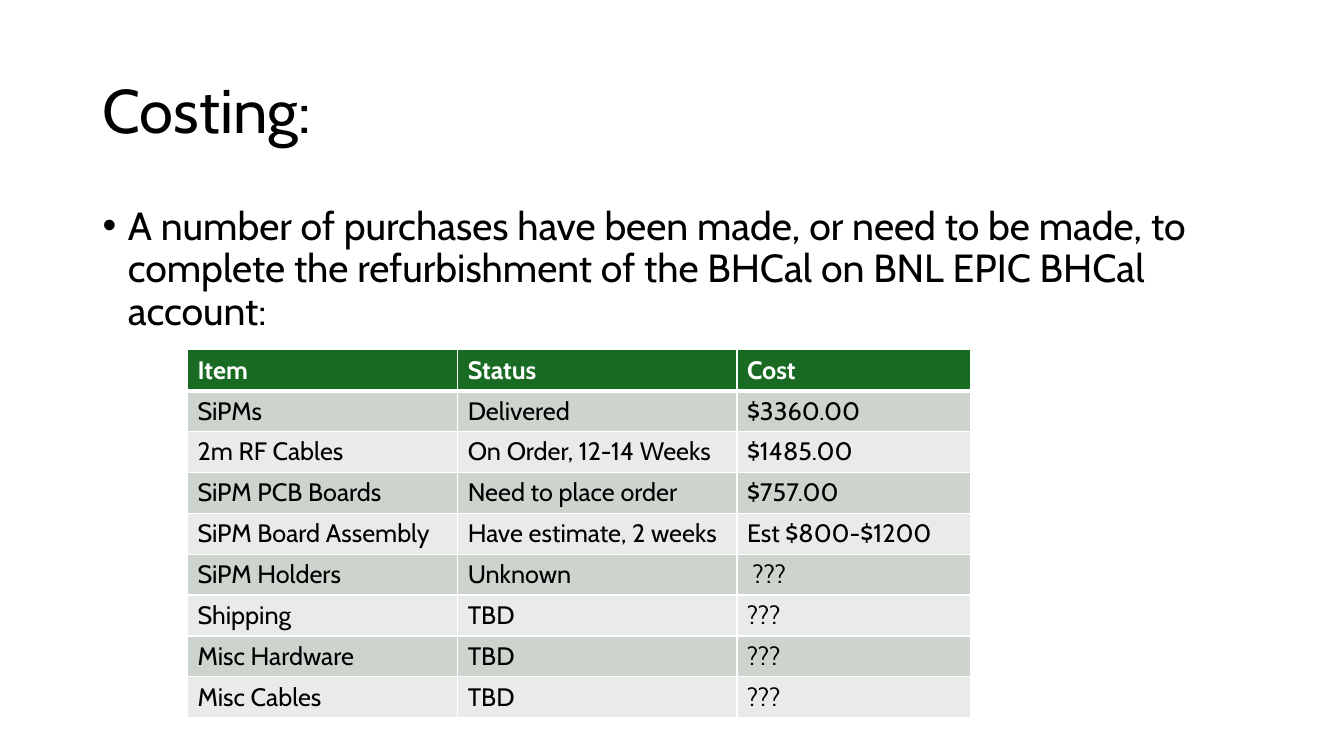
from dataclasses import dataclass

from lxml import etree
from pptx import Presentation
from pptx import util as u
from pptx.dml.color import RGBColor
from pptx.enum import text
from pptx.oxml import ns

SLIDE_W, SLIDE_H = 13.33, 7.5
MARGIN = 0.069 * SLIDE_W
CONTENT_W = SLIDE_W - 2 * MARGIN
FONT = "Cabin"
BLACK, WHITE, GREEN = "000000", "FFFFFF", "196B24"
BANDS = ("CCD4CD", "E8EBE8")
COLUMN_WIDTHS = (2.68, 2.77, 2.32)
ROW_H = 3.65 / 9
TABLE_LEFT, TABLE_TOP = 1.86, 3.47
THIN, THICK = 1, 3


@dataclass(frozen=True)
class Purchase:
    item: str
    status: str
    cost: str


HEADINGS = Purchase("Item", "Status", "Cost")
PURCHASES = (
    Purchase("SiPMs", "Delivered", "$3360.00"),
    Purchase("2m RF Cables", "On Order, 12-14 Weeks", "$1485.00"),
    Purchase("SiPM PCB Boards", "Need to place order", "$757.00"),
    Purchase("SiPM Board Assembly", "Have estimate, 2 weeks", "Est $800-$1200"),
    Purchase("SiPM Holders", "Unknown", " ???"),
    Purchase("Shipping", "TBD", "???"),
    Purchase("Misc Hardware", "TBD", "???"),
    Purchase("Misc Cables", "TBD", "???"),
)


def rgb(value: str) -> RGBColor:
    return RGBColor.from_string(value)


def write(frame, words: str, *, size: float, color: str = BLACK, bold: bool = False,
          line_spacing: float = 1.0, space_before: float = 0):
    """Put one formatted paragraph in a text frame and return it."""
    paragraph = frame.paragraphs[0]
    paragraph.alignment = text.PP_ALIGN.LEFT
    paragraph.line_spacing = line_spacing
    paragraph.space_before = u.Pt(space_before)
    run = paragraph.add_run()
    run.text = words
    run.font.name = FONT
    run.font.size = u.Pt(size)
    run.font.bold = bold
    run.font.color.rgb = rgb(color)
    return paragraph


def place(shape, left: float, top: float, width: float, height: float) -> None:
    shape.left, shape.top = u.Inches(left), u.Inches(top)
    shape.width, shape.height = u.Inches(width), u.Inches(height)


def add_bullet(paragraph, indent: float) -> None:
    properties = paragraph._p.get_or_add_pPr()
    properties.set("marL", str(u.Inches(indent)))
    properties.set("indent", str(-u.Inches(indent)))
    etree.SubElement(properties, ns.qn("a:buFont"), typeface="Arial")
    etree.SubElement(properties, ns.qn("a:buChar"), char="•")


def add_borders(cell, top: float, bottom: float) -> None:
    properties = cell._tc.get_or_add_tcPr()
    for side, width in (("L", THIN), ("R", THIN), ("T", top), ("B", bottom)):
        line = etree.SubElement(properties, ns.qn(f"a:ln{side}"), w=str(u.Pt(width)))
        fill = etree.SubElement(line, ns.qn("a:solidFill"))
        etree.SubElement(fill, ns.qn("a:srgbClr"), val=WHITE)


def add_cost_table(slide) -> None:
    rows = (HEADINGS, *PURCHASES)
    table = slide.shapes.add_table(
        len(rows), len(COLUMN_WIDTHS), u.Inches(TABLE_LEFT), u.Inches(TABLE_TOP),
        u.Inches(sum(COLUMN_WIDTHS)), u.Inches(ROW_H * len(rows))).table
    for column, width in zip(table.columns, COLUMN_WIDTHS):
        column.width = u.Inches(width)
    for r, purchase in enumerate(rows):
        heading = r == 0
        table.rows[r].height = u.Inches(ROW_H)
        for c, words in enumerate((purchase.item, purchase.status, purchase.cost)):
            cell = table.cell(r, c)
            add_borders(cell, THICK if r == 1 else THIN, THICK if heading else THIN)
            cell.fill.solid()
            cell.fill.fore_color.rgb = rgb(GREEN if heading else BANDS[(r - 1) % 2])
            write(cell.text_frame, words, size=18, bold=heading,
                  color=WHITE if heading else BLACK)


def main() -> None:
    deck = Presentation()
    deck.slide_width, deck.slide_height = u.Inches(SLIDE_W), u.Inches(SLIDE_H)
    slide = deck.slides.add_slide(deck.slide_layouts[5])

    # Title
    title = slide.shapes.title
    place(title, MARGIN, 0.4, CONTENT_W, 1.45)
    title.text_frame.vertical_anchor = text.MSO_ANCHOR.MIDDLE
    write(title.text_frame, "Costing:", size=44, line_spacing=0.9)

    # Introduction
    introduction = slide.shapes.add_textbox(0, 0, 0, 0)
    place(introduction, MARGIN, 2, CONTENT_W, 4.76)
    introduction.text_frame.word_wrap = True
    paragraph = write(
        introduction.text_frame,
        "A number of purchases have been made, or need to be made, to complete "
        "the refurbishment of the BHCal on BNL EPIC BHCal account:",
        size=28, line_spacing=0.9, space_before=10)
    add_bullet(paragraph, 0.25)

    # Purchases and their costs
    add_cost_table(slide)
    deck.save("out.pptx")


if __name__ == "__main__":
    main()
